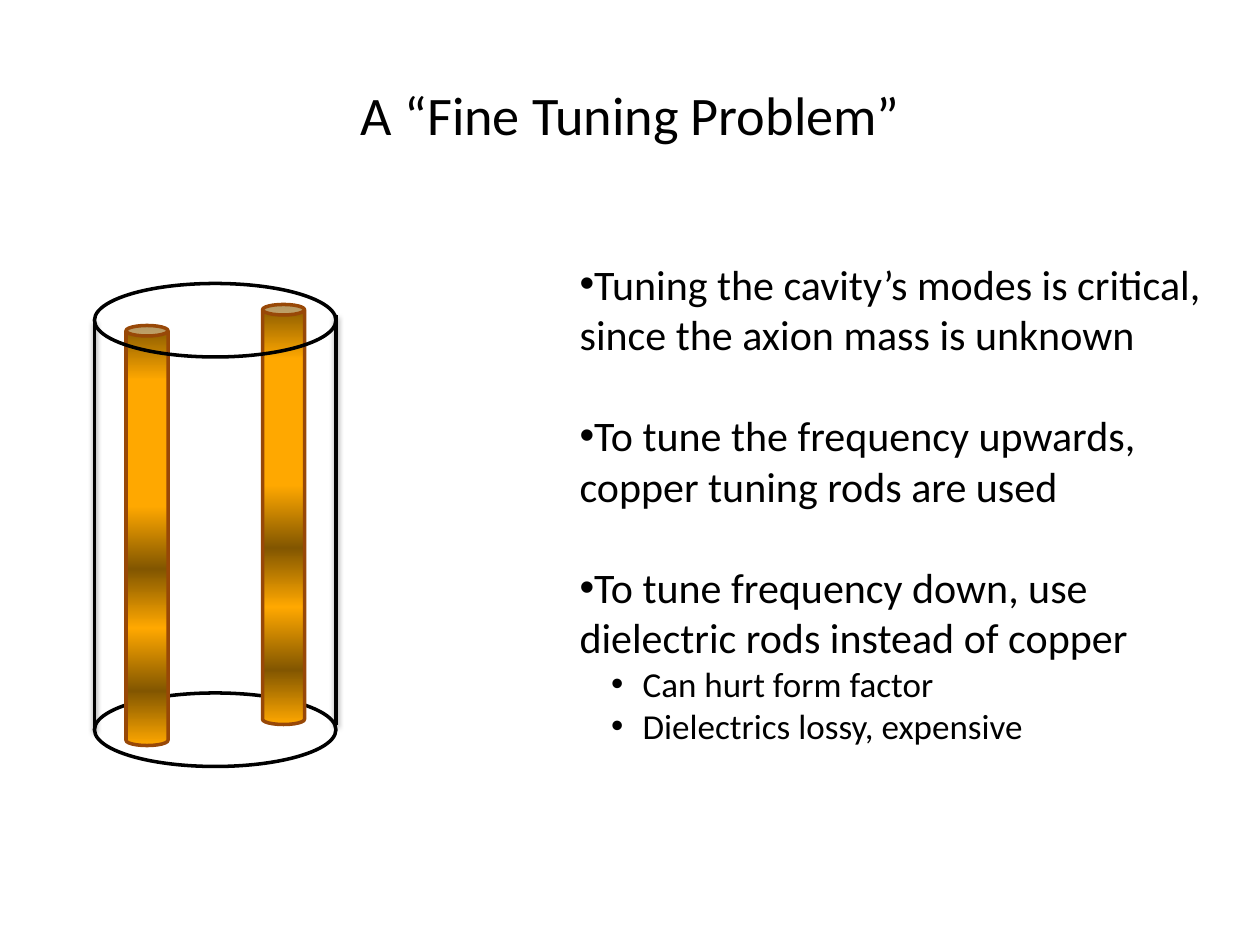
from copy import deepcopy
from dataclasses import dataclass

from lxml.etree import SubElement
from pptx import Presentation
from pptx.dml.color import RGBColor
from pptx.enum.shapes import MSO_CONNECTOR, MSO_SHAPE
from pptx.enum.text import MSO_ANCHOR, MSO_AUTO_SIZE, PP_ALIGN
from pptx.oxml.ns import qn
from pptx.util import Pt


@dataclass(frozen=True)
class Theme:
    font: str = "Calibri"
    title: float = 31
    body: float = 24
    sub: float = 20
    ink: str = "000000"
    paper: str = "FFFFFF"
    rim: str = "984807"
    dark: str = "825600"
    light: str = "FFA800"
    line: float = 2


THEME = Theme()
POINTS = [
    (0, "Tuning the cavity’s modes is critical, since the axion mass is unknown"),
    (0, "To tune the frequency upwards, copper tuning rods are used"),
    (0, "To tune frequency down, use dielectric rods instead of copper"),
    (1, "Can hurt form factor"),
    (1, "Dielectrics lossy, expensive"),
]


def rgb(code):
    return RGBColor.from_string(code)


def place(shape, box):
    shape.left, shape.top, shape.width, shape.height = map(Pt, box)


def write(para, text, size=THEME.body, color=THEME.ink, align=PP_ALIGN.LEFT,
          before=0, level=0):
    para.alignment = align
    para.level = level
    para.space_before = Pt(before)
    run = para.add_run()
    run.text = text
    run.font.name = THEME.font
    run.font.size = Pt(size)
    run.font.color.rgb = rgb(color)


def mark(para, left, hang):
    """Give a paragraph a round bullet with its own indents."""
    props = para._p.get_or_add_pPr()
    props.set("marL", str(Pt(left)))
    props.set("indent", str(Pt(-hang)))
    SubElement(props, qn("a:buChar"), char="•")


def stroke(shape, color=THEME.ink):
    shape.line.color.rgb = rgb(color)
    shape.line.width = Pt(THEME.line)


def add_title(slide, box):
    title = slide.shapes.title
    place(title, box)
    frame = title.text_frame
    frame.vertical_anchor = MSO_ANCHOR.MIDDLE
    write(frame.paragraphs[0], "A “Fine Tuning Problem”", size=THEME.title,
          align=PP_ALIGN.CENTER)


def add_points(slide, box):
    body = slide.placeholders[1]
    place(body, box)
    frame = body.text_frame
    frame.word_wrap = True
    frame.auto_size = MSO_AUTO_SIZE.NONE
    for i, (level, text) in enumerate(POINTS):
        para = frame.add_paragraph() if i else frame.paragraphs[0]
        if level:
            write(para, text, size=THEME.sub, level=level)
            mark(para, 36, 18)
        else:
            write(para, text, before=29 if i else 0)
            mark(para, 0, 0)


def add_oval(slide, box, fill=None):
    oval = slide.shapes.add_shape(MSO_SHAPE.OVAL, *map(Pt, box))
    oval.shadow.inherit = False
    if fill:
        oval.fill.solid()
        oval.fill.fore_color.rgb = rgb(fill)
    else:
        oval.fill.background()
    stroke(oval)


def add_wall(slide, x, top, height):
    wall = slide.shapes.add_connector(
        MSO_CONNECTOR.STRAIGHT, Pt(x), Pt(top), Pt(x), Pt(top + height))
    stroke(wall)
    effects = SubElement(wall._element.spPr, qn("a:effectLst"))
    shade = SubElement(effects, qn("a:outerShdw"), blurRad=str(Pt(3.1)),
                       dist=str(Pt(1.6)), dir="5400000", rotWithShape="0")
    color = SubElement(shade, qn("a:srgbClr"), val=THEME.ink)
    SubElement(color, qn("a:alpha"), val="38000")


def add_rod(slide, box):
    rod = slide.shapes.add_shape(MSO_SHAPE.CAN, *map(Pt, box))
    rod.shadow.inherit = False
    stroke(rod, THEME.rim)
    dark, light = THEME.dark, THEME.light
    stops = [(0, dark), (13, light), (43, light), (58, dark), (72, light),
             (87, dark), (100, light)]
    rod.fill.gradient()
    rod.fill.gradient_angle = 270
    nodes = rod._element.spPr.find(f".//{qn('a:gsLst')}")
    while len(nodes) < len(stops):
        nodes.append(deepcopy(nodes[0]))
    for stop, (pos, color) in zip(rod.fill.gradient_stops, stops):
        stop.position = pos / 100
        stop.color.rgb = rgb(color)


def add_cavity(slide, box):
    """Draw the open cylinder with its two tuning rods."""
    x, y, width, height = box
    cap = 42
    add_oval(slide, (x, y + height - cap, width, cap), THEME.paper)
    add_wall(slide, x, y + 21, height - cap)
    add_wall(slide, x + width, y + 18, height - cap)
    for dx, dy in ((96, 12), (18, 24)):
        add_rod(slide, (x + dx, y + dy, 24, 240))
    add_oval(slide, (x, y, width, cap))


def main():
    deck = Presentation()
    deck.slide_width, deck.slide_height = Pt(720), Pt(540)
    slide = deck.slides.add_slide(deck.slide_layouts[1])
    add_title(slide, (24, 21.6, 672, 86.4))
    add_points(slide, (324, 144, 372, 376))
    add_cavity(slide, (54, 162, 138, 276))
    deck.save("out.pptx")


if __name__ == "__main__":
    main()
